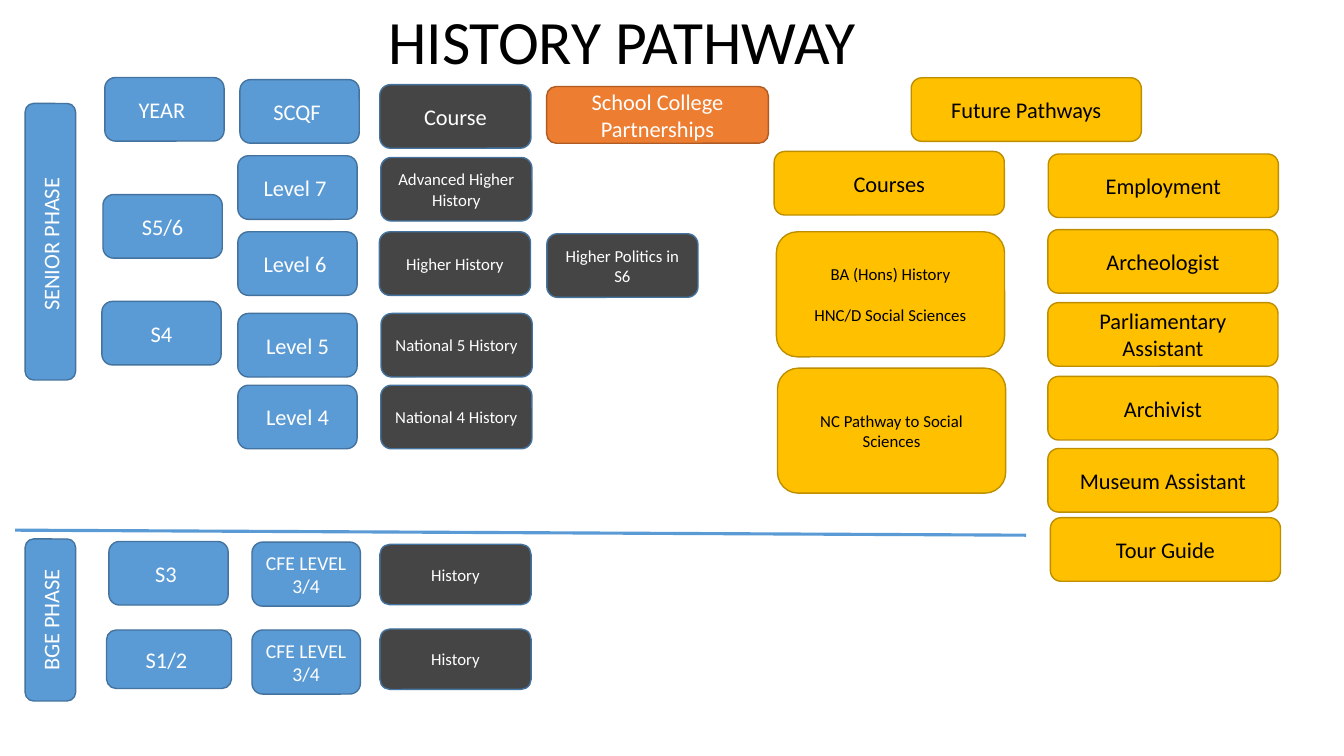
from pptx import Presentation
from pptx import util as u
from pptx.dml.color import RGBColor
from pptx.enum import shapes, text
from lxml import etree

Pt = u.Pt
BLUE = ("5B9BD5", "43739E", "FFFFFF")
GREY = ("454545", "43739E", "FFFFFF")
ORANGE = ("ED7D31", "AF5C24", "FFFFFF")
GOLD = ("FFC000", "BD8E00", "000000")


def rgb(value):
    return RGBColor.from_string(value)


def write(sp, words, size, color):
    tf = sp.text_frame
    tf.word_wrap = True
    tf.vertical_anchor = text.MSO_ANCHOR.MIDDLE
    tf.text = words
    for p in tf.paragraphs:
        p.alignment = text.PP_ALIGN.CENTER
        for r in p.runs:
            r.font.name = "Calibri"
            r.font.size = Pt(size)
            r.font.color.rgb = rgb(color)
    return tf


prs = Presentation()
prs.slide_width, prs.slide_height = Pt(960), Pt(540)
s = prs.slides.add_slide(prs.slide_layouts[6])

title = s.shapes.add_textbox(Pt(159.8), Pt(4.3), Pt(568.8), Pt(55.4))
write(title, "HISTORY PATHWAY", 44, "000000").paragraphs[0].line_spacing = 0.9

groups = [
    (BLUE, 16, 85.2, 45.4, [
        ("YEAR ", 74.9, 55.4), ("S5/6", 73.6, 139), ("S4", 72.8, 215.3),
        ("S3 ", 77.8, 386.8), ("SCQF ", 171.4, 56.9), ("Level 7 ", 169.9, 111.3),
        ("Level 6 ", 169.9, 165.6), ("Level 5", 169.9, 223.9), ("Level 4", 169.9, 275.2)]),
    (BLUE, 16, 89.3, 41.8, [("S1/2 ", 76.1, 450)]),
    (BLUE, 14, 77.4, 45.8, [("CFE LEVEL 3/4", 180, 387.2), ("CFE LEVEL 3/4", 180, 450)]),
    (GREY, 16, 108, 45.4, [("Course", 271.3, 60.5)]),
    (GREY, 12, 108, 45.4, [
        ("Advanced Higher History", 272, 112.5), ("Higher History", 271, 165.6),
        ("National 5 History", 272.2, 223.9), ("National 4 History", 272, 275.2),
        ("Higher Politics in S6", 390.6, 167)]),
    (GREY, 12, 108, 43.2, [("History", 271.4, 388.8), ("History", 271.4, 449.3)]),
    (ORANGE, 16, 158.4, 40.5, [("School College Partnerships", 390.5, 61.8)]),
    (GOLD, 16, 164.4, 45.4, [
        ("Future Pathways", 650.9, 55.6), ("Courses", 553, 108.2),
        ("Employment", 748.8, 110), ("Archeologist", 748.5, 164),
        ("Parliamentary Assistant", 748.5, 216.2), ("Archivist", 748.5, 268.9),
        ("Museum Assistant", 748.5, 320.4), ("Tour Guide", 750.3, 369.8)]),
    (GOLD, 12, 163, 89.3, [
        ("BA (Hons) History\nHNC/D Social Sciences", 554.6, 165.6),
        ("NC Pathway to Social Sciences", 555.4, 263)]),
    (BLUE, 16, 36, 197.5, [("SENIOR PHASE ", 18, 73.9)]),
    (BLUE, 16, 36, 115.7, [("BGE PHASE", 18, 385)]),
]
for (fill, line, color), size, width, height, boxes in groups:
    for words, left, top in boxes:
        sp = s.shapes.add_shape(shapes.MSO_SHAPE.ROUNDED_RECTANGLE,
                                Pt(left), Pt(top), Pt(width), Pt(height))
        sp.shadow.inherit = False
        sp.fill.solid()
        sp.fill.fore_color.rgb = rgb(fill)
        sp.line.color.rgb = rgb(line)
        sp.line.width = Pt(1)
        tf = write(sp, words, size, color)
        for p in tf.paragraphs[1:]:
            p.space_before = Pt(14.6)
        if height > 2 * width:
            sp._element.txBody.bodyPr.set("vert", "vert270")

divider = s.shapes.add_connector(shapes.MSO_CONNECTOR.STRAIGHT,
                                 Pt(10.8), Pt(378.7), Pt(733), Pt(382.3))
divider.line.color.rgb = rgb("5B9BD5")
divider.line.width = Pt(2.25)
etree.SubElement(divider._element.spPr,
                 "{http://schemas.openxmlformats.org/drawingml/2006/main}effectLst")

prs.save("out.pptx")
